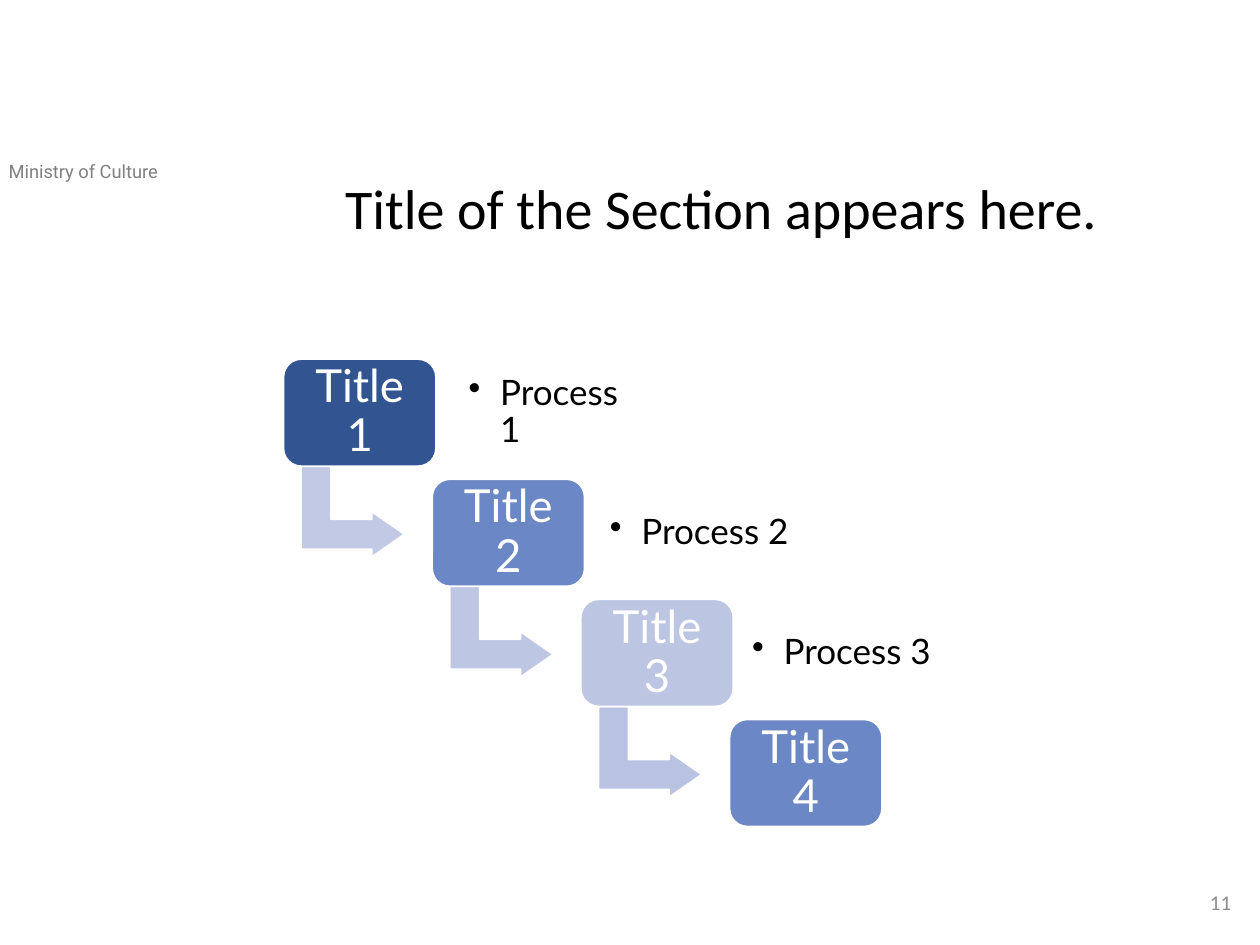
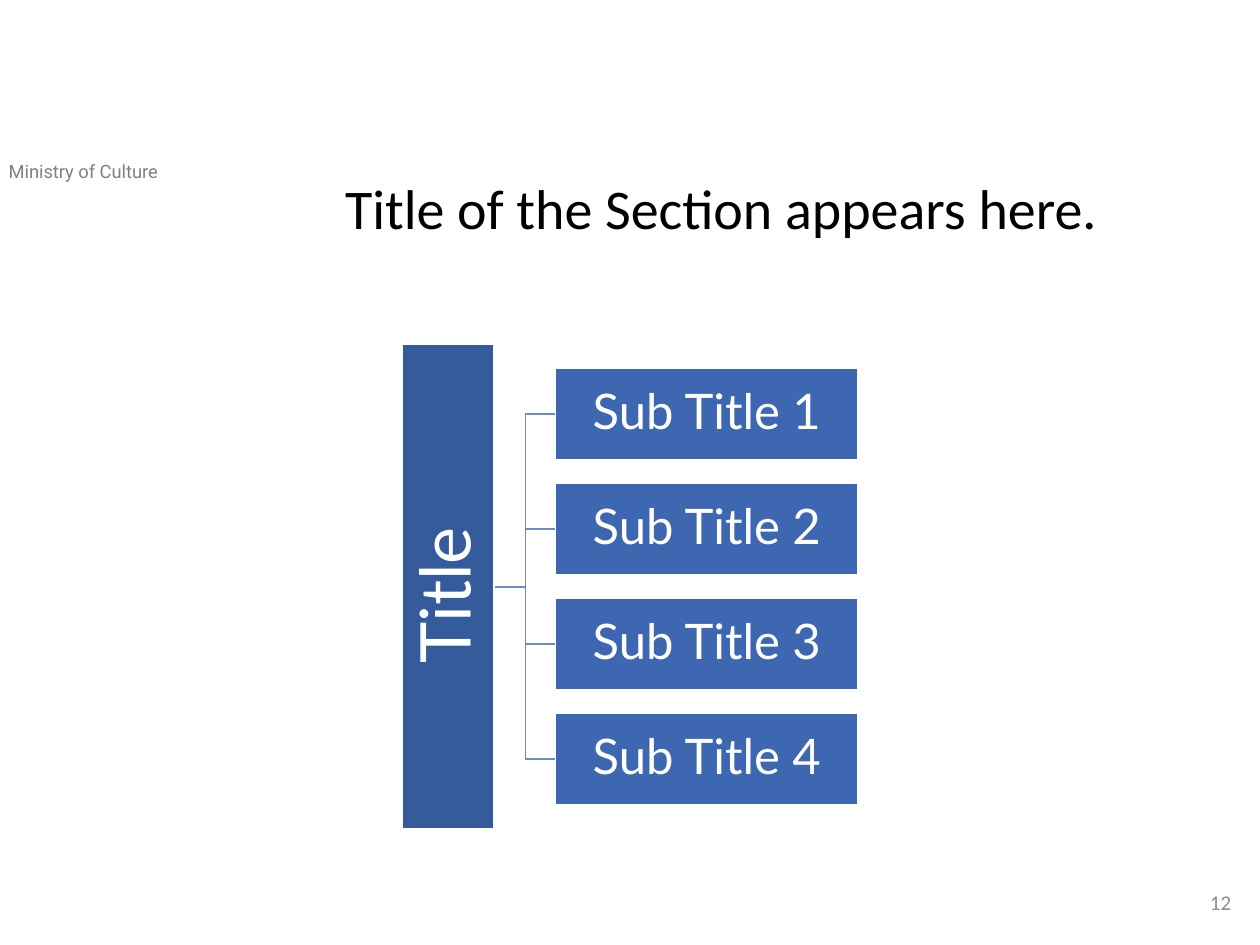
import pptx
import pptx.util
import pptx.dml.color
import pptx.enum.shapes
import pptx.enum.text
import pptx.oxml.ns
from lxml import etree

Inches, Pt = pptx.util.Inches, pptx.util.Pt
RGB = pptx.dml.color.RGBColor.from_string
SHAPE = pptx.enum.shapes.MSO_SHAPE
ALIGN = pptx.enum.text.PP_ALIGN
ANCHOR = pptx.enum.text.MSO_ANCHOR
qn = pptx.oxml.ns.qn

COLORS = {
    "text": "000000", "white": "FFFFFF", "ministry": "808080", "number": "8C8C8C",
    "bracket": "6D89CB", "title_bar": "365B9D", "subtitle": "3E67B2",
}


def add_text(s, text, at, shape=None, fill=None, size=12, font="Lato", color="text",
             align=ALIGN.LEFT, anchor=ANCHOR.MIDDLE, inset=None, spacing=None, bullet=False):
    """Add text at (left, top, width, height), in a filled shape if one is named."""
    box = [Inches(v) for v in at]
    if shape is None:
        sp = s.shapes.add_textbox(*box)
    else:
        sp = add_block(s, shape, at, fill)
    tf = sp.text_frame
    tf.word_wrap = True
    tf.vertical_anchor = anchor
    if inset is not None:
        tf.margin_left = tf.margin_right = tf.margin_top = tf.margin_bottom = Inches(inset)
    p = tf.paragraphs[0]
    p.alignment = align
    if spacing:
        p.line_spacing = spacing
    if bullet:
        pPr = p._p.get_or_add_pPr()
        pPr.set("marL", str(Inches(0.25)))
        pPr.set("indent", str(-Inches(0.25)))
        etree.SubElement(pPr, qn("a:buChar")).set("char", "•")
    r = p.add_run()
    r.text = text
    r.font.size = Pt(size)
    r.font.name = font
    r.font.color.rgb = RGB(COLORS[color])
    return sp


def add_block(s, shape, at, fill):
    """Add a flat shape with a thin white outline."""
    sp = s.shapes.add_shape(shape, *[Inches(v) for v in at])
    sp.shadow.inherit = False
    sp.fill.solid()
    sp.fill.fore_color.rgb = RGB(fill)
    sp.line.color.rgb = RGB(COLORS["white"])
    sp.line.width = Pt(1)
    return sp


prs = pptx.Presentation()
prs.slide_width, prs.slide_height = Inches(10), Inches(7.5)

# What both slides share
slides = []
for number in (11, 12):
    s = prs.slides.add_slide(prs.slide_layouts[6])
    add_text(s, "Ministry of Culture", (-0.03, 1.22, 2.18, 0.28), size=10.5,
             font="Roboto", color="ministry", anchor=ANCHOR.TOP)
    add_text(s, str(number), (7.62, 6.96, 2.25, 0.4), font="Calibri",
             color="number", align=ALIGN.RIGHT)
    add_text(s, "Title of the Section appears here.", (2.64, 1.39, 6.38, 0.79), size=32,
             font="Calibri", anchor=ANCHOR.TOP, spacing=0.9)
    slides.append(s)
steps_slide, bracket_slide = slides

# Step-down process: box colour, arrow colour, left and width of the process text
steps = [
    ("325491", "C1C9E4", 3.61, 1.6),
    ("6C87C5", "BDC6E3", 4.73, 2.35),
    ("BCC6E2", "B9C2E1", 5.86, 1.97),
    ("6C87C5", None, None, None),
]
for i, (box_fill, arrow_fill, process_left, process_width) in enumerate(steps):
    left, top = 2.25 + 1.18 * i, 2.85 + 2.86 / 3 * i
    if arrow_fill:
        arrow = add_block(steps_slide, SHAPE.BENT_UP_ARROW,
                          (left + 0.19, top + 0.8, 0.72, 0.82), arrow_fill)
        arrow.rotation = 90
        for k, value in enumerate((0.33, 0.25, 0.36)):
            arrow.adjustments[k] = value
        add_text(steps_slide, f"Process {i + 1}", (process_left, top + 0.08, process_width, 0.69),
                 size=20, inset=0.11, spacing=0.9, bullet=True)
    add_text(steps_slide, f"Title {i + 1}", (left, top, 1.21, 0.85),
             shape=SHAPE.ROUNDED_RECTANGLE, fill=box_fill, size=26, color="white",
             align=ALIGN.CENTER, inset=0.11, spacing=0.9)

# Title bar bracketed to four subtitles
bar_right, bar_middle = 3.93, 4.66
sub_left, sub_top, sub_width, sub_height, sub_pitch = 4.41, 2.92, 2.4, 0.73, 2.74 / 3
sub_tops = [sub_top + sub_pitch * i for i in range(4)]
for top in sub_tops:
    line = bracket_slide.shapes.add_connector(
        pptx.enum.shapes.MSO_CONNECTOR.ELBOW, Inches(bar_right), Inches(bar_middle),
        Inches(sub_left), Inches(top + sub_height / 2))
    line.line.color.rgb = RGB(COLORS["bracket"])
    line.line.width = Pt(1)
    etree.SubElement(line._element.spPr, qn("a:effectLst"))

bar = add_text(bracket_slide, "Title ", (1.63, 4.29, 3.85, 0.73), shape=SHAPE.RECTANGLE,
               fill=COLORS["title_bar"], size=40, color="white", align=ALIGN.CENTER,
               inset=0.03, spacing=0.9)
bar.rotation = 270
for i, top in enumerate(sub_tops):
    add_text(bracket_slide, f"Sub Title {i + 1}", (sub_left, top, sub_width, sub_height),
             shape=SHAPE.RECTANGLE, fill=COLORS["subtitle"], size=28, color="white",
             align=ALIGN.CENTER, inset=0.02, spacing=0.9)

prs.save("out.pptx")
